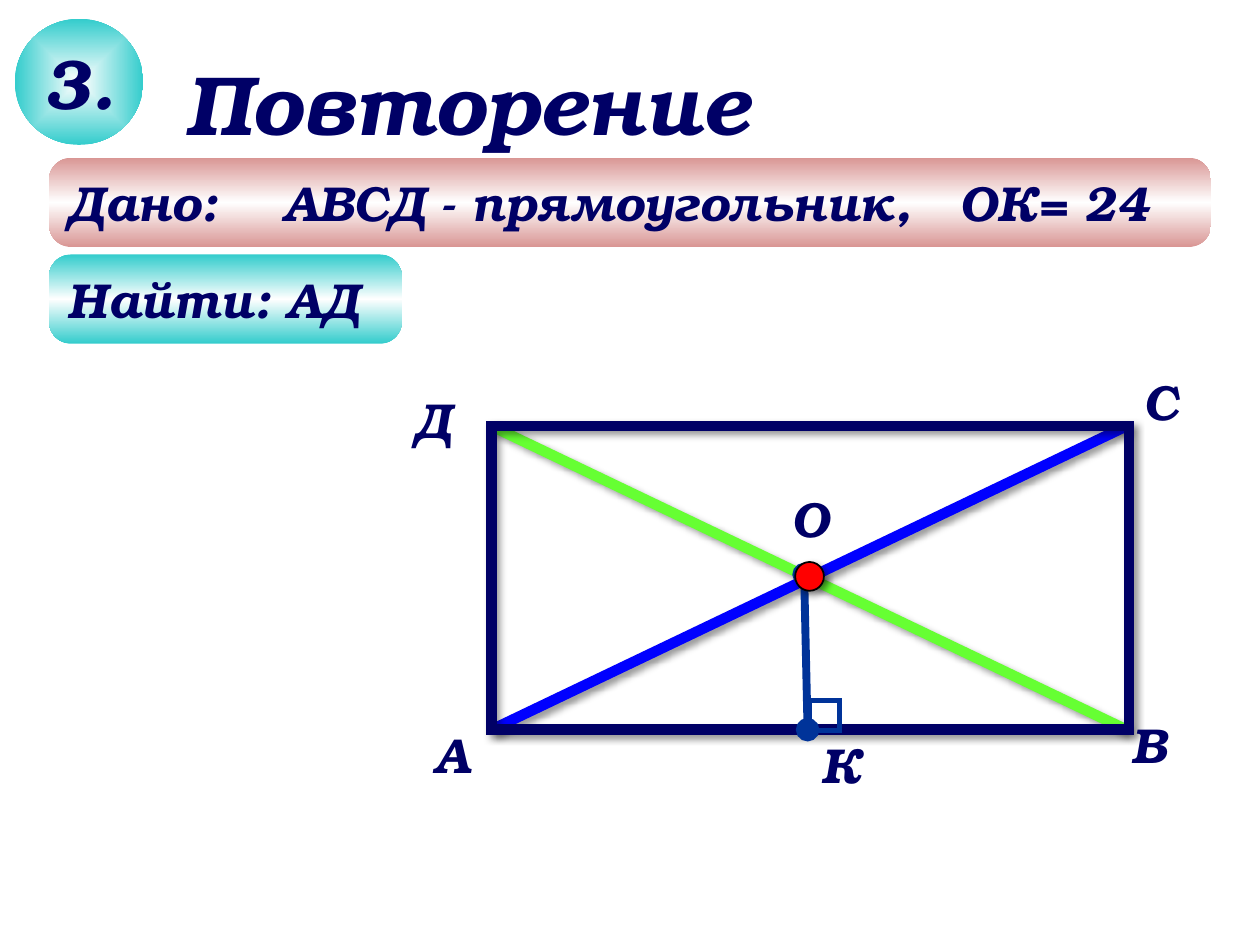
from dataclasses import dataclass

from lxml.etree import SubElement
from pptx import Presentation
from pptx.dml.color import RGBColor
from pptx.enum.shapes import MSO_CONNECTOR, MSO_SHAPE
from pptx.enum.text import MSO_ANCHOR, PP_ALIGN
from pptx.oxml.ns import qn
from pptx.util import Cm, Pt


@dataclass(frozen=True)
class Theme:
    font: str = "TeX Gyre Bonum"
    ink: str = "000066"
    teal: str = "33CCCC"
    rose: str = "D99694"
    white: str = "FFFFFF"
    green: str = "66FF33"
    blue: str = "0000FF"
    navy: str = "003399"
    red: str = "FF0000"
    black: str = "000000"
    body: int = 28
    number: int = 40
    title: int = 48


THEME = Theme()


def add_node(parent, tag, **attributes):
    return SubElement(parent, qn(tag), {k: str(v) for k, v in attributes.items()})


def write(frame, text, size, align=PP_ALIGN.LEFT, wrap=True, tabs=()):
    frame.word_wrap = wrap
    paragraph = frame.paragraphs[0]
    paragraph.text = text
    paragraph.alignment = align
    if tabs:
        tab_list = add_node(paragraph._p.get_or_add_pPr(), "a:tabLst")
        for position in tabs:
            add_node(tab_list, "a:tab", pos=Cm(position), algn="l")
    font = paragraph.font
    font.name, font.size = THEME.font, Pt(size)
    font.bold = font.italic = True
    font.color.rgb = RGBColor.from_string(THEME.ink)


def add_figure(slide, kind, left, top, width, height):
    figure = slide.shapes.add_shape(kind, Cm(left), Cm(top), Cm(width), Cm(height))
    figure.shadow.inherit = False
    figure.fill.background()
    figure.line.fill.background()
    return figure


def add_label(slide, text, size, left, top, width, height, wrap=False):
    label = slide.shapes.add_textbox(Cm(left), Cm(top), Cm(width), Cm(height))
    write(label.text_frame, text, size, wrap=wrap)


def add_segment(slide, x1, y1, x2, y2, color, weight):
    segment = slide.shapes.add_connector(
        MSO_CONNECTOR.STRAIGHT, Cm(x1), Cm(y1), Cm(x2), Cm(y2))
    stroke(segment, color, weight)
    add_node(segment._element.spPr, "a:effectLst")
    return segment


def stroke(figure, color, weight):
    figure.line.color.rgb = RGBColor.from_string(color)
    figure.line.width = Pt(weight)


def square_corners(figure):
    add_node(figure._element.spPr.find(qn("a:ln")), "a:miter", lim=800000)


def cast_shadow(figure):
    effects = figure._element.spPr.find(qn("a:effectLst"))
    shadow = add_node(effects, "a:outerShdw", blurRad=Pt(4), dist=Pt(3),
                      dir=45 * 60000, algn="tl", rotWithShape=0)
    color = add_node(shadow, "a:srgbClr", val=THEME.black)
    add_node(color, "a:alpha", val=40000)


def shade(figure, colors, radial=False):
    figure.fill.gradient()
    gradient = figure._element.spPr.find(qn("a:gradFill"))
    gradient.clear()
    stops = add_node(gradient, "a:gsLst")
    for index, color in enumerate(colors):
        stop = add_node(stops, "a:gs", pos=100000 * index // (len(colors) - 1))
        add_node(stop, "a:srgbClr", val=color)
    if radial:
        center = add_node(gradient, "a:path", path="shape")
        add_node(center, "a:fillToRect", l=50000, t=50000, r=50000, b=50000)
    else:
        add_node(gradient, "a:lin", ang=90 * 60000, scaled=1)


def add_heading(slide, left, top):
    # Numbered badge and title
    badge = add_figure(slide, MSO_SHAPE.OVAL, left, top, 2.59, 2.54)
    shade(badge, [THEME.white, THEME.teal], radial=True)
    badge.text_frame.vertical_anchor = MSO_ANCHOR.MIDDLE
    write(badge.text_frame, "3.", THEME.number, PP_ALIGN.CENTER, wrap=False)
    add_label(slide, "Повторение", THEME.title, left + 3.2, top + 0.53, 11.99, 2.31,
              wrap=True)


def add_banner(slide, text, edge, left, top, width, height, tabs=()):
    banner = add_figure(slide, MSO_SHAPE.ROUNDED_RECTANGLE, left, top, width, height)
    banner.adjustments[0] = 0.25
    shade(banner, [edge, THEME.white, edge])
    banner.text_frame.vertical_anchor = MSO_ANCHOR.MIDDLE
    write(banner.text_frame, text, THEME.body, tabs=tabs)


def add_diagram(slide, left, top, width, height):
    right, bottom = left + width, top + height

    # Diagonals
    for start, end, color in ((bottom, top, THEME.green), (top, bottom, THEME.blue)):
        diagonal = add_segment(slide, right - 0.05, start, left, end, color, 6)
        cast_shadow(diagonal)

    # Sides of the rectangle
    sides = add_figure(slide, MSO_SHAPE.RECTANGLE, left, top, width, height)
    stroke(sides, THEME.ink, 6)
    square_corners(sides)
    cast_shadow(sides)

    # Vertex and point names
    names = (("А", -1.4, 5.89), ("С", 12.9, -1.22), ("В", 12.65, 5.68),
             ("Д", -1.81, -0.87), ("О", 5.79, 1.14), ("К", 6.4, 6.09))
    for name, dx, dy in names:
        add_label(slide, name, THEME.body, left + dx, top + dy, 1.28, 1.45)

    # Perpendicular OK
    perpendicular = add_segment(slide, left + 6.3, top + 2.99, left + 6.37, bottom,
                                THEME.navy, 4.5)
    outline = perpendicular._element.spPr.find(qn("a:ln"))
    for end in ("a:headEnd", "a:tailEnd"):
        add_node(outline, end, type="oval")

    # Intersection point
    center = add_figure(slide, MSO_SHAPE.OVAL, left + 6.12, top + 2.74, 0.58, 0.58)
    center.fill.solid()
    center.fill.fore_color.rgb = RGBColor.from_string(THEME.red)
    stroke(center, THEME.black, 1)
    cast_shadow(center)

    # Right angle mark
    angle = add_figure(slide, MSO_SHAPE.RECTANGLE, left + 6.4, top + 5.53, 0.61, 0.61)
    stroke(angle, THEME.navy, 3)
    square_corners(angle)


def main():
    deck = Presentation()
    deck.slide_width, deck.slide_height = Cm(25.4), Cm(19.05)
    slide = deck.slides.add_slide(deck.slide_layouts[6])
    add_banner(slide, "Дано:\tАВСД - прямоугольник,\tОК= 24", THEME.rose,
               0.99, 3.18, 23.42, 1.8, tabs=(4.34, 17.98))
    add_banner(slide, "Найти: АД", THEME.teal, 0.99, 5.13, 7.11, 1.8)
    add_heading(slide, 0.3, 0.38)
    add_diagram(slide, 9.91, 8.59, 12.85, 6.12)
    deck.save("out.pptx")


if __name__ == "__main__":
    main()
